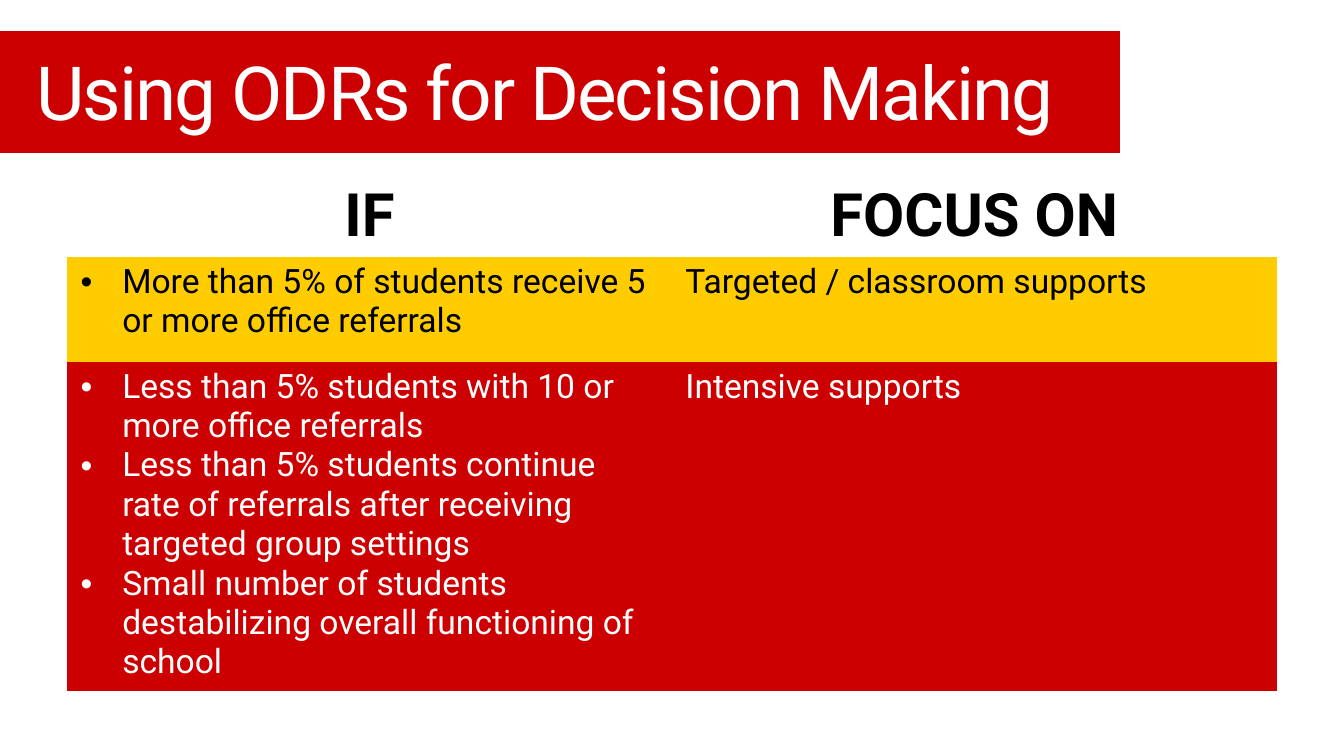
"""Build the slide on using office referrals for decision making."""
from dataclasses import dataclass

from lxml import etree
from pptx import Presentation, util as u
from pptx.dml.color import RGBColor
from pptx.enum import shapes, text
from pptx.oxml.ns import qn

WIDE = u.Inches(10)
HIGH = WIDE * 9 // 16
FONT = "Roboto"
RED, GOLD, WHITE, BLACK = "CC0000", "FFCC00", "FFFFFF", "000000"
PLAIN = "{2D5ABB26-0587-4C30-8999-92F81FD0307C}"


@dataclass
class Box:
    """A frame in percent of the slide's width and height."""
    x: float
    y: float
    w: float
    h: float

    def frame(self) -> tuple[int, int, int, int]:
        """Return left, top, width and height as lengths."""
        return across(self.x), down(self.y), across(self.w), down(self.h)


@dataclass
class Band:
    """One table row: its two cells, its height and its look."""
    cause: list[str]
    focus: str
    high: float
    fill: str | None
    ink: str
    size: int = 18
    head: bool = False


BAR = Box(-0.84, 4.04, 84.2, 16.36)
TITLE = Box(1.68, 4.8, 81.7, 14.4)
GRID = Box(5, 23.27, 90, 65.43)
BANDS = [
    Band(["IF"], "FOCUS ON", 8, None, BLACK, 32, True),
    Band(["More than 5% of students receive 5 or more office referrals"],
         "Targeted / classroom supports", 13.87, GOLD, BLACK),
    Band(["Less than 5% students with 10 or more office referrals",
          "Less than 5% students continue rate of referrals after receiving "
          "targeted group settings",
          "Small number of students destabilizing overall functioning of school"],
         "Intensive supports", 43.56, RED, WHITE),
]


def across(part: float) -> int:
    """Turn a percentage of the width into a length."""
    return round(WIDE * part / 100)


def down(part: float) -> int:
    """Turn a percentage of the height into a length."""
    return round(HIGH * part / 100)


def tint(code: str) -> RGBColor:
    """Turn a hex string into a colour."""
    return RGBColor.from_string(code)


def style(para, size: int, ink: str, bold: bool = False) -> None:
    """Format every run of a paragraph."""
    for run in para.runs:
        font = run.font
        font.name, font.size, font.bold = FONT, u.Pt(size), bold
        font.color.rgb = tint(ink)


def bullet(para) -> None:
    """Give a paragraph a hanging round bullet."""
    props = para._p.get_or_add_pPr()
    hang = u.Inches(0.31)
    props.set("marL", str(hang))
    props.set("indent", str(-hang))
    etree.SubElement(props, qn("a:buFont")).set("typeface", "Arial")
    etree.SubElement(props, qn("a:buChar")).set("char", "•")


def write(cell, lines: list[str], band: Band, listed: bool) -> None:
    """Fill one table cell with its text and colour."""
    cell.margin_left = cell.margin_right = u.Inches(0.1)
    cell.margin_top = cell.margin_bottom = u.Inches(0.04)
    if band.fill:
        cell.fill.solid()
        cell.fill.fore_color.rgb = tint(band.fill)
    else:
        cell.fill.background()
    cell.text_frame.text = "\n".join(lines)
    for para in cell.text_frame.paragraphs:
        style(para, band.size, band.ink, band.head)
        if band.head:
            para.alignment = text.PP_ALIGN.CENTER
        elif listed:
            bullet(para)


def banner(slide) -> None:
    """Draw the red bar and set the title on it."""
    bar = slide.shapes.add_shape(shapes.MSO_SHAPE.RECTANGLE, *BAR.frame())
    bar.shadow.inherit = False
    bar.fill.solid()
    bar.fill.fore_color.rgb = tint(RED)
    bar.line.color.rgb = tint(WHITE)
    bar.line.width = u.Pt(0.75)
    title = slide.shapes.title
    title.element.addprevious(bar.element)
    title.left, title.top, title.width, title.height = TITLE.frame()
    frame = title.text_frame
    frame.text = "Using ODRs for Decision Making"
    frame.auto_size = text.MSO_AUTO_SIZE.NONE
    frame.vertical_anchor = text.MSO_ANCHOR.MIDDLE
    para = frame.paragraphs[0]
    para.alignment = text.PP_ALIGN.LEFT
    style(para, 40, WHITE)
    para.runs[0].font._element.set("spc", "-100")


def chart(slide) -> None:
    """Draw the table of conditions and supports."""
    table = slide.shapes.add_table(len(BANDS), 2, *GRID.frame()).table
    table._tbl.tblPr.find(qn("a:tableStyleId")).text = PLAIN
    table.horz_banding = False
    for row, band in zip(table.rows, BANDS):
        row.height = down(band.high)
        write(row.cells[0], band.cause, band, True)
        write(row.cells[1], [band.focus], band, False)


def main() -> None:
    """Build and save the deck."""
    deck = Presentation()
    deck.slide_width, deck.slide_height = WIDE, HIGH
    slide = deck.slides.add_slide(deck.slide_layouts[5])
    banner(slide)
    chart(slide)
    deck.save("out.pptx")


if __name__ == "__main__":
    main()
